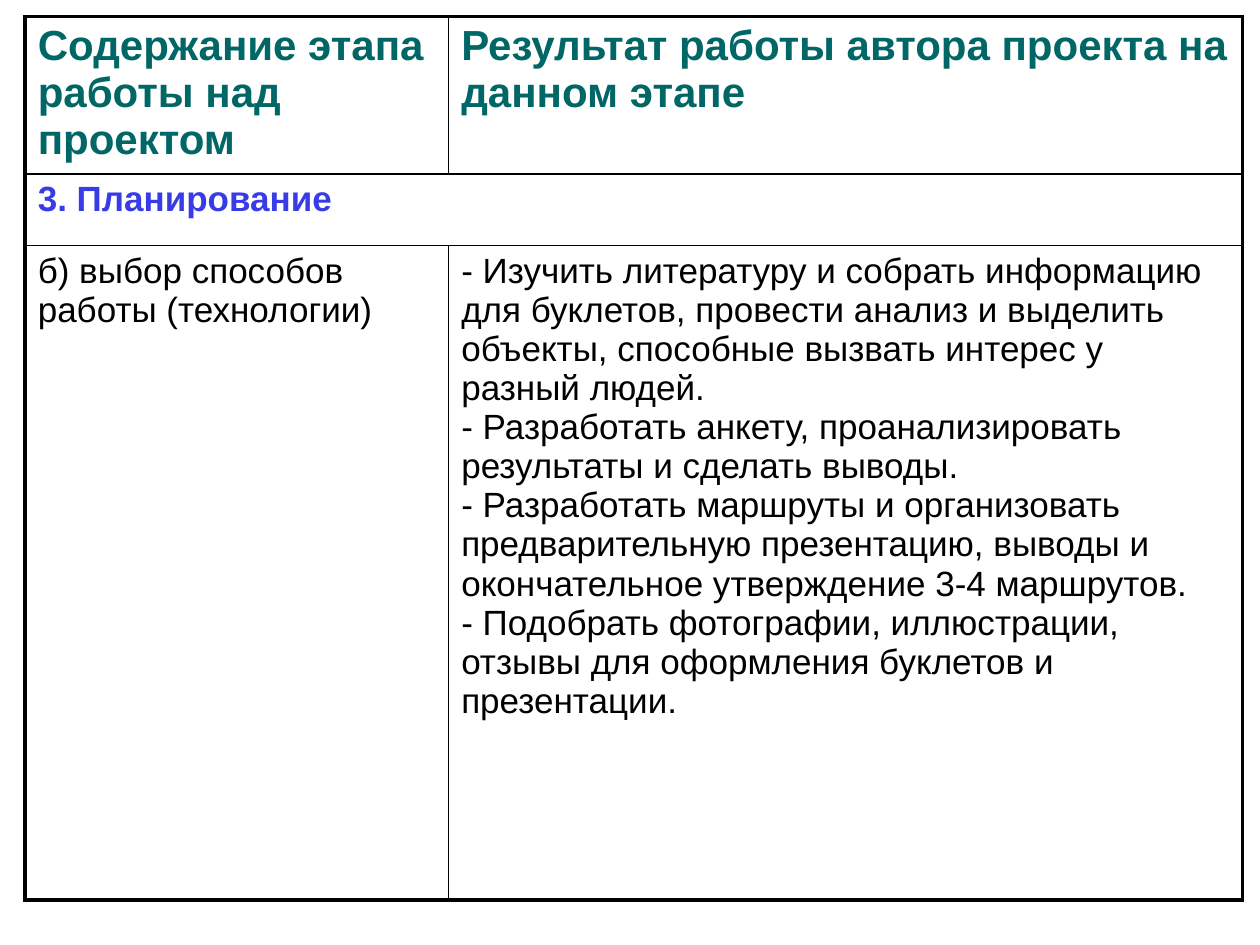
from dataclasses import dataclass

from lxml import etree
from pptx import Presentation, util as u
from pptx.dml.color import RGBColor
from pptx.oxml import ns


@dataclass(frozen=True)
class Theme:
    font: str = "Arial"
    heading: str = "006666"
    stage: str = "383CE6"
    body: str = "000000"
    border: str = "000000"
    heading_size: float = 24
    body_size: float = 20
    outer: float = 2.25
    inner: float = 1


@dataclass(frozen=True)
class Style:
    size: float
    color: str
    bold: bool


@dataclass(frozen=True)
class Row:
    height: float
    style: Style
    cells: tuple[tuple[str, ...], ...]


T = Theme()
HEADING = Style(T.heading_size, T.heading, True)
STAGE = Style(T.body_size, T.stage, True)
BODY = Style(T.body_size, T.body, False)

LEFT, TOP = 14.4, 9.4
WIDTHS = (242, 453.6)
ROWS = (
    Row(90, HEADING, (
        ("Содержание этапа работы над проектом",),
        ("Результат работы автора проекта на данном этапе",),
    )),
    Row(41, STAGE, (("3. Планирование",),)),
    Row(374, BODY, (
        ("б) выбор способов работы (технологии)",),
        (
            "- Изучить литературу и собрать информацию для буклетов, провести анализ "
            "и выделить объекты, способные вызвать интерес у разный людей.",
            "- Разработать анкету, проанализировать результаты и сделать выводы.",
            "- Разработать маршруты и организовать предварительную презентацию, "
            "выводы и окончательное утверждение 3-4 маршрутов.",
            "- Подобрать фотографии, иллюстрации, отзывы для оформления буклетов "
            "и презентации.",
        ),
    )),
)


def write(cell, lines: tuple[str, ...], style: Style) -> None:
    p = cell.text_frame.paragraphs[0]
    for i, line in enumerate(lines):
        if i:
            p.add_line_break()
        r = p.add_run()
        r.text = line
        r.font.name = T.font
        r.font.size = u.Pt(style.size)
        r.font.bold = style.bold
        r.font.color.rgb = RGBColor.from_string(style.color)


def add_borders(cell, outer_edges: dict[str, bool]) -> None:
    tc_pr = cell._tc.get_or_add_tcPr()
    for i, (edge, is_outer) in enumerate(outer_edges.items()):
        width = u.Pt(T.outer if is_outer else T.inner)
        ln = etree.Element(ns.qn(f"a:ln{edge}"), w=str(int(width)))
        fill = etree.SubElement(ln, ns.qn("a:solidFill"))
        etree.SubElement(fill, ns.qn("a:srgbClr"), val=T.border)
        tc_pr.insert(i, ln)


def add_stage_table(s, rows: tuple[Row, ...]) -> None:
    n_rows, n_cols = len(rows), len(WIDTHS)
    height = sum(row.height for row in rows)
    tbl = s.shapes.add_table(n_rows, n_cols, u.Pt(LEFT), u.Pt(TOP),
                             u.Pt(sum(WIDTHS)), u.Pt(height)).table
    tbl.first_row = tbl.horz_banding = False
    for col, width in zip(tbl.columns, WIDTHS):
        col.width = u.Pt(width)
    for i, row in enumerate(rows):
        tbl.rows[i].height = u.Pt(row.height)
        spans = len(row.cells) < n_cols
        if spans:
            tbl.cell(i, 0).merge(tbl.cell(i, n_cols - 1))
        for j in range(n_cols):
            cell = tbl.cell(i, j)
            cell.fill.background()
            add_borders(cell, {
                "L": j == 0 or spans,
                "R": j == n_cols - 1 or spans,
                "T": i == 0,
                "B": i == n_rows - 1,
            })
        for j, lines in enumerate(row.cells):
            write(tbl.cell(i, j), lines, row.style)


def main() -> None:
    prs = Presentation()
    prs.slide_width, prs.slide_height = u.Pt(720), u.Pt(540)
    s = prs.slides.add_slide(prs.slide_layouts[6])
    add_stage_table(s, ROWS)
    prs.save("out.pptx")


if __name__ == "__main__":
    main()
